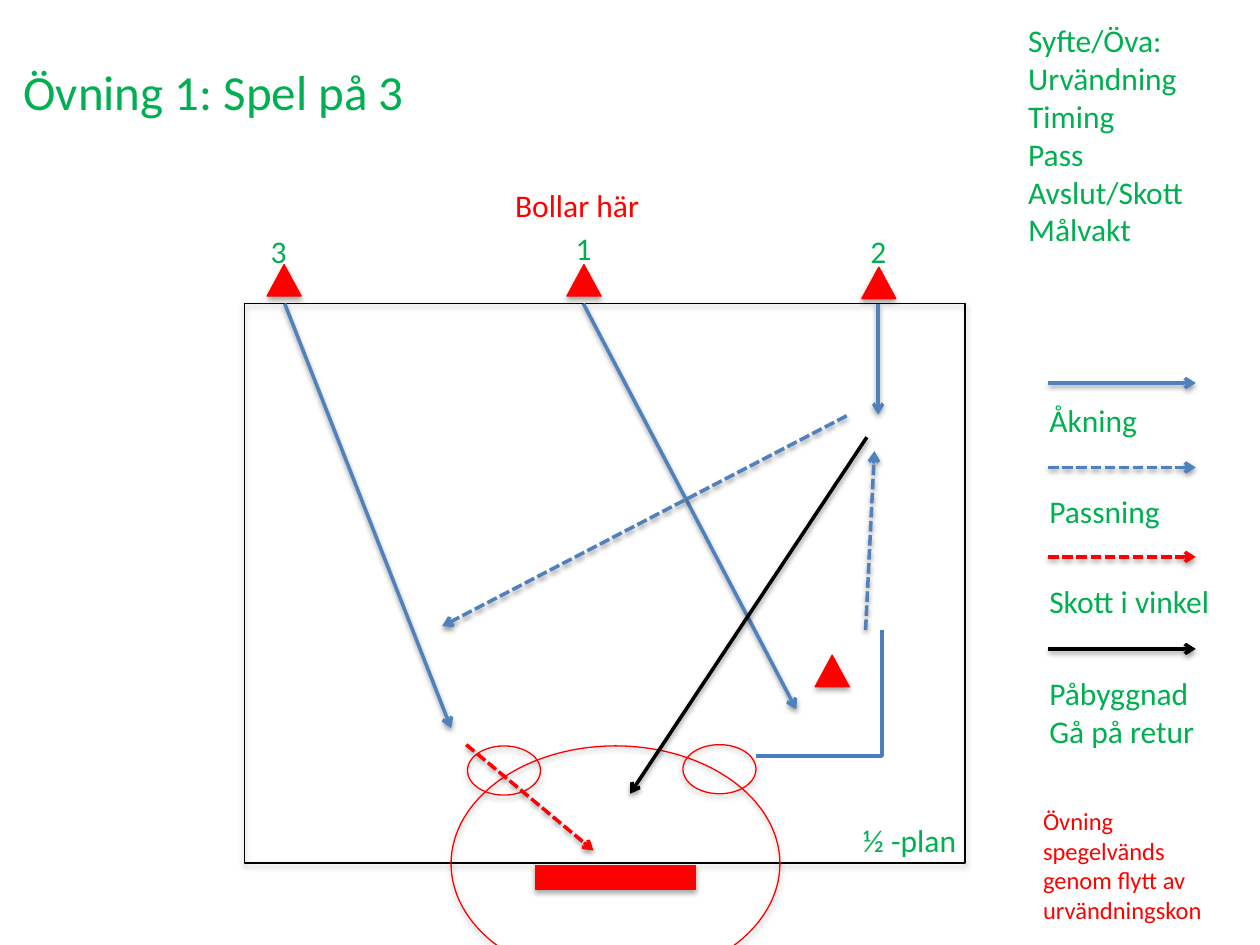
"""Build a hockey drill slide with a half rink, player paths and a legend."""
from dataclasses import dataclass

from lxml.etree import SubElement
from pptx import Presentation
from pptx.dml.color import RGBColor
from pptx.enum.dml import MSO_LINE_DASH_STYLE as Dash
from pptx.enum.shapes import MSO_CONNECTOR_TYPE as Connector, MSO_SHAPE as Shape
from pptx.enum.text import MSO_ANCHOR as Anchor, MSO_AUTO_SIZE as AutoSize, PP_ALIGN as Align
from pptx.oxml.ns import qn
from pptx.slide import Slide
from pptx.text.text import TextFrame
from pptx.util import Inches, Pt


@dataclass(frozen=True)
class Theme:
    """Hold the colours, font and type sizes of the slide."""
    green: str = "00B050"
    red: str = "FF0000"
    blue: str = "4F81BD"
    curve: str = "4B7EBC"
    black: str = "000000"
    font: str = "Calibri"
    title: int = 28
    text: int = 18
    note: int = 14
    outline: float = 0.75
    arrow: float = 2
    turn: float = 2.25


THEME = Theme()


@dataclass(frozen=True)
class Arrow:
    """Describe a player, pass or shot path."""
    start: tuple[float, float]
    end: tuple[float, float]
    color: str = THEME.blue
    dashed: bool = False


@dataclass(frozen=True)
class Figure:
    """Describe a preset shape on the rink."""
    kind: Shape
    at: tuple[float, float, float, float]
    color: str = THEME.red
    filled: bool = False


@dataclass(frozen=True)
class Label:
    """Describe a text box."""
    text: str
    at: tuple[float, float, float, float]
    color: str = THEME.green
    size: int = THEME.text


@dataclass(frozen=True)
class LegendRow:
    """Describe a legend arrow and the label under it."""
    text: str
    top: float
    label_top: float
    color: str = THEME.blue
    dashed: bool = False
    height: float = 0.4


RINK = Figure(Shape.RECTANGLE, (1.94, 2.41, 5.72, 4.44), THEME.black)
GOAL = Figure(Shape.RECTANGLE, (4.25, 6.87, 1.27, 0.19), filled=True)
CIRCLES = [Figure(Shape.OVAL, at) for at in (
    (3.58, 5.92, 2.61, 1.87), (3.71, 5.92, 0.58, 0.39), (5.42, 5.91, 0.58, 0.39))]
CONES = [Figure(Shape.ISOSCELES_TRIANGLE, (left, top, 0.27, 0.25), filled=True)
         for left, top in ((2.12, 2.1), (4.5, 2.1), (6.84, 2.12), (6.47, 5.2))]
PATHS = [
    Arrow((6.97, 2.41), (6.97, 3.29)),
    Arrow((4.63, 2.41), (6.32, 5.63)),
    Arrow((6.72, 3.3), (3.51, 4.97), dashed=True),
    Arrow((6.87, 5), (6.94, 3.58), dashed=True),
    Arrow((2.26, 2.41), (3.58, 5.78)),
    Arrow((3.7, 5.91), (4.71, 6.75), THEME.red, True),
    Arrow((6.88, 3.47), (5, 6.3), THEME.black),
]
TURN = [(6.49, 5.72), (6.57, 5.75), (6.66, 5.78), (6.72, 5.78), (6.78, 5.77), (6.83, 5.75),
        (6.89, 5.69), (6.92, 5.6), (6.94, 5.55), (6.94, 5.35), (6.92, 5.14), (6.89, 5.11),
        (6.88, 5.07), (6.88, 5.02)]
LABELS = [
    Label("3", (2.05, 1.79, 0.41, 0.4)),
    Label("1", (4.47, 1.77, 0.41, 0.4)),
    Label("2", (6.81, 1.79, 0.33, 0.4)),
    Label("Bollar här", (3.99, 1.43, 1.23, 0.4), THEME.red),
    Label("½ -plan", (6.75, 6.47, 1.34, 0.4)),
    Label("Övning spegelvänds genom flytt av urvändningskon", (8.18, 6.35, 1.7, 1.04),
          THEME.red, THEME.note),
]
LEGEND = [
    LegendRow("Åkning", 3.04, 3.13),
    LegendRow("Passning", 3.71, 3.86, dashed=True),
    LegendRow("Skott i vinkel", 4.42, 4.57, THEME.red, True),
    LegendRow("Påbyggnad\vGå på retur", 5.15, 5.3, THEME.black, height=0.71),
]
GOALS = "Syfte/Öva:\nUrvändning\nTiming\nPass\nAvslut/Skott\nMålvakt"


def write(frame: TextFrame, text: str, *, size: int = THEME.text, color: str = THEME.green,
          align: Align = Align.LEFT, plain_list: bool = False) -> None:
    """Fill a text frame with formatted paragraphs."""
    frame.word_wrap = True
    frame.auto_size = AutoSize.NONE
    frame.vertical_anchor = Anchor.TOP
    frame.text = text
    for para in frame.paragraphs:
        if plain_list:
            props = para._p.get_or_add_pPr()
            props.set("marL", "0")
            props.set("indent", "0")
            SubElement(props, qn("a:buNone"))
            para.space_before = Pt(0)
        para.alignment = align
        for span in para.runs:
            span.font.name = THEME.font
            span.font.size = Pt(size)
            span.font.color.rgb = RGBColor.from_string(color)


def place(box, at: tuple[float, float, float, float]) -> None:
    """Move and size a placeholder."""
    box.left, box.top, box.width, box.height = map(Inches, at)


def add_shadow(effects, distance: float, opacity: int) -> None:
    """Put a soft downward shadow into an effect list."""
    shadow = SubElement(effects, qn("a:outerShdw"), blurRad=str(Pt(3.1)),
                        dist=str(Pt(distance)), dir="5400000", rotWithShape="0")
    tint = SubElement(shadow, qn("a:srgbClr"), val=THEME.black)
    SubElement(tint, qn("a:alpha"), val=str(opacity * 1000))


def add_arrow(page: Slide, arrow: Arrow) -> None:
    """Draw a path with an open arrowhead."""
    line = page.shapes.add_connector(
        Connector.STRAIGHT, *map(Inches, (*arrow.start, *arrow.end)))
    line.line.color.rgb = RGBColor.from_string(arrow.color)
    line.line.width = Pt(THEME.arrow)
    if arrow.dashed:
        line.line.dash_style = Dash.SQUARE_DOT
    SubElement(line.line._get_or_add_ln(), qn("a:tailEnd"), type="arrow")
    add_shadow(SubElement(line._element.spPr, qn("a:effectLst")), 1.6, 38)


def add_figure(page: Slide, figure: Figure) -> None:
    """Draw a filled or outlined preset shape."""
    shape = page.shapes.add_shape(figure.kind, *map(Inches, figure.at))
    shape.shadow.inherit = False
    color = RGBColor.from_string(figure.color)
    if figure.filled:
        shape.fill.solid()
        shape.fill.fore_color.rgb = color
    else:
        shape.fill.background()
    shape.line.color.rgb = color
    shape.line.width = Pt(THEME.outline)
    add_shadow(shape._element.spPr.find(qn("a:effectLst")), 1.8, 35)


def add_label(page: Slide, label: Label) -> None:
    """Draw a text box."""
    box = page.shapes.add_textbox(*map(Inches, label.at))
    write(box.text_frame, label.text, size=label.size, color=label.color)


def add_legend_row(page: Slide, row: LegendRow) -> None:
    """Draw a legend arrow with its label."""
    add_arrow(page, Arrow((8.32, row.top), (9.49, row.top), row.color, row.dashed))
    add_label(page, Label(row.text, (8.23, row.label_top, 1.7, row.height)))


def add_turn(page: Slide) -> None:
    """Draw the turn around the lower cone."""
    builder = page.shapes.build_freeform(*TURN[0], scale=Inches(1))
    builder.add_line_segments(TURN[1:], close=False)
    turn = builder.convert_to_shape()
    turn.shadow.inherit = False
    turn.fill.background()
    turn.line.color.rgb = RGBColor.from_string(THEME.curve)
    turn.line.width = Pt(THEME.turn)


def main() -> None:
    """Build and save the slide."""
    deck = Presentation()
    deck.slide_width, deck.slide_height = Inches(10), Inches(7.5)
    page = deck.slides.add_slide(deck.slide_layouts[1])
    title, body = page.placeholders
    place(title, (-2.13, 0.44, 7.65, 0.57))
    write(title.text_frame, "Övning 1: Spel på 3", size=THEME.title, align=Align.CENTER)
    place(body, (8.06, 0.12, 2.23, 2.22))
    write(body.text_frame, GOALS, plain_list=True)
    for figure in (RINK, GOAL, *CIRCLES, *CONES):
        add_figure(page, figure)
    add_turn(page)
    for arrow in PATHS:
        add_arrow(page, arrow)
    for label in LABELS:
        add_label(page, label)
    for row in LEGEND:
        add_legend_row(page, row)
    deck.save("out.pptx")


if __name__ == "__main__":
    main()
